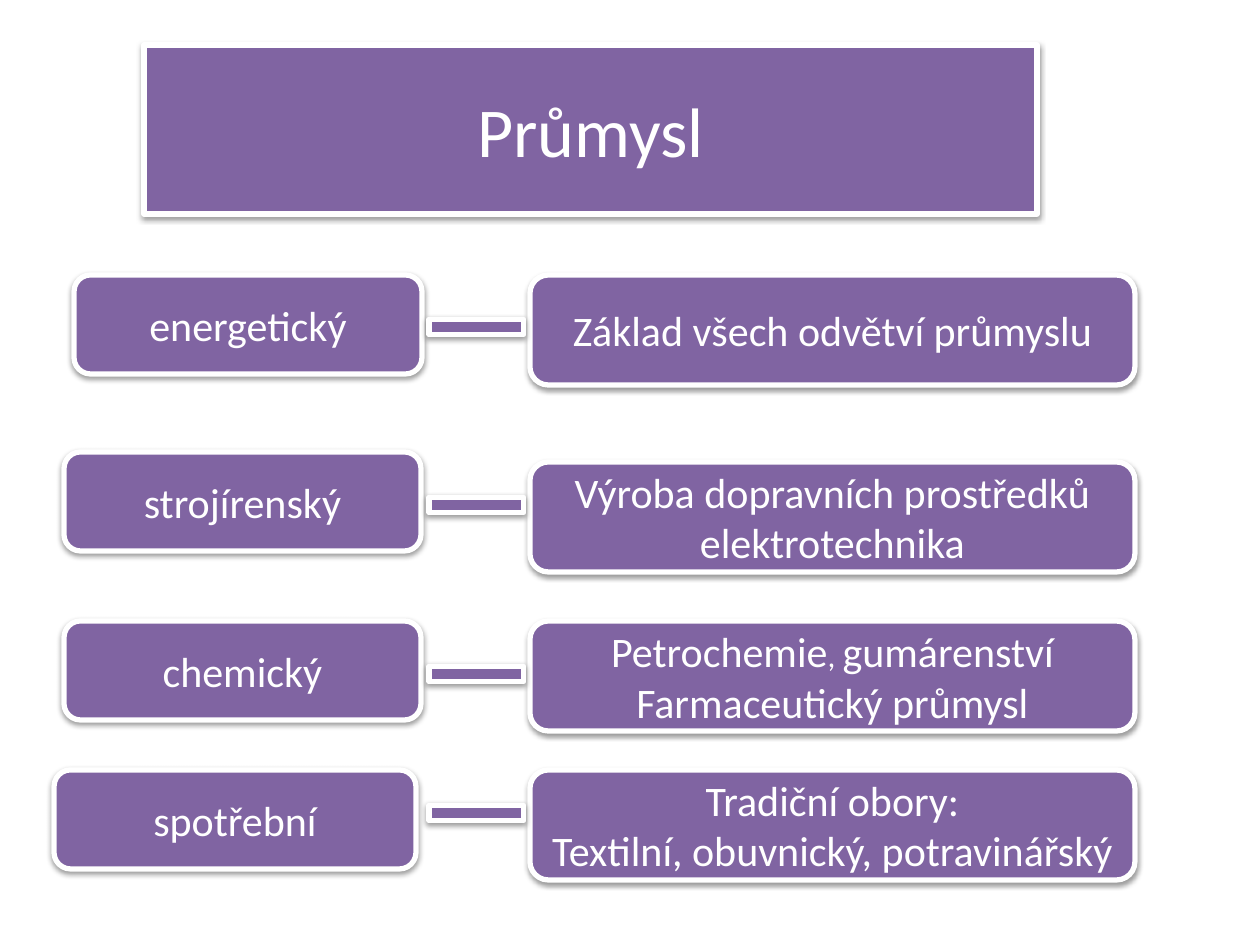
import pptx
import pptx.dml.color
import pptx.enum.shapes
import pptx.enum.text
import pptx.oxml
import pptx.oxml.ns
import pptx.util

PURPLE = pptx.dml.color.RGBColor(0x80, 0x64, 0xA2)
WHITE = pptx.dml.color.RGBColor(0xFF, 0xFF, 0xFF)
SHAPES = pptx.enum.shapes.MSO_SHAPE
NAMESPACE = pptx.oxml.ns.nsdecls("a")
SCALE = 914400 / 126  # EMU in one px

SHADOW = (
    f'<a:outerShdw {NAMESPACE} blurRad="40000" dist="20000" dir="5400000" rotWithShape="0">'
    '<a:srgbClr val="000000"><a:alpha val="38000"/></a:srgbClr></a:outerShdw>'
)
ROUNDED = f'<a:prstGeom {NAMESPACE} prst="roundRect"><a:avLst/></a:prstGeom>'


def px(*lengths):
    return [round(length * SCALE) for length in lengths]


def style(shape, lines=(), size=24):
    """Purple fill, white outline, soft shadow and centred white lines of text."""
    shape.fill.solid()
    shape.fill.fore_color.rgb = PURPLE
    shape.line.color.rgb = WHITE
    shape.line.width = pptx.util.Pt(3)
    shape.shadow.inherit = False
    effects = shape.element.spPr.find(pptx.oxml.ns.qn("a:effectLst"))
    effects.append(pptx.oxml.parse_xml(SHADOW))

    frame = shape.text_frame
    frame.text = "\n".join(lines)
    frame.word_wrap = True
    frame.vertical_anchor = pptx.enum.text.MSO_ANCHOR.MIDDLE
    for para in frame.paragraphs:
        para.alignment = pptx.enum.text.PP_ALIGN.CENTER
        para.font.size = pptx.util.Pt(size)
        for span in para.runs:
            span.font.size = pptx.util.Pt(size)
            span.font.name = "Calibri"
            span.font.color.rgb = WHITE


deck = pptx.Presentation()
deck.slide_width, deck.slide_height = px(1260, 945)
page = deck.slides.add_slide(deck.slide_layouts[5])

# Title in a rounded box
title = page.shapes.title
title.left, title.top, title.width, title.height = px(144, 45, 893, 169)
title.element.spPr.append(pptx.oxml.parse_xml(ROUNDED))
style(title, ["Průmysl"], 40)

# Rows: branch (left, top, width), top of its description, lines of the description
rows = [
    ("energetický", 74, 275, 348, 275, ["Základ všech odvětví průmyslu"]),
    ("strojírenský", 64, 452, 357, 462, ["Výroba dopravních prostředků", "elektrotechnika"]),
    ("chemický", 64, 621, 357, 621, ["Petrochemie", "Farmaceutický průmysl"]),
    ("spotřební", 54, 770, 362, 770, ["Tradiční obory:", "Textilní, obuvnický, potravinářský"]),
]
descriptions = {}
for branch, left, top, width, description_top, lines in rows:
    box = page.shapes.add_shape(SHAPES.ROUNDED_RECTANGLE, *px(left, top, width, 99))
    style(box, [branch])
    box = page.shapes.add_shape(SHAPES.ROUNDED_RECTANGLE, *px(530, description_top, 605, 110))
    style(box, lines)
    descriptions[branch] = box

# The chemical branch goes on after a smaller comma
para = descriptions["chemický"].text_frame.paragraphs[0]
for text, size in [(", ", 18), ("gumárenství", 24)]:
    span = para.add_run()
    span.text = text
    span.font.size = pptx.util.Pt(size)
    span.font.name = "Calibri"
    span.font.color.rgb = WHITE

# Dashes between branches and descriptions
for top in (294, 472, 641, 780):
    dash = page.shapes.add_shape(SHAPES.MATH_MINUS, *px(412, top, 129, 66))
    style(dash)

deck.save("out.pptx")
